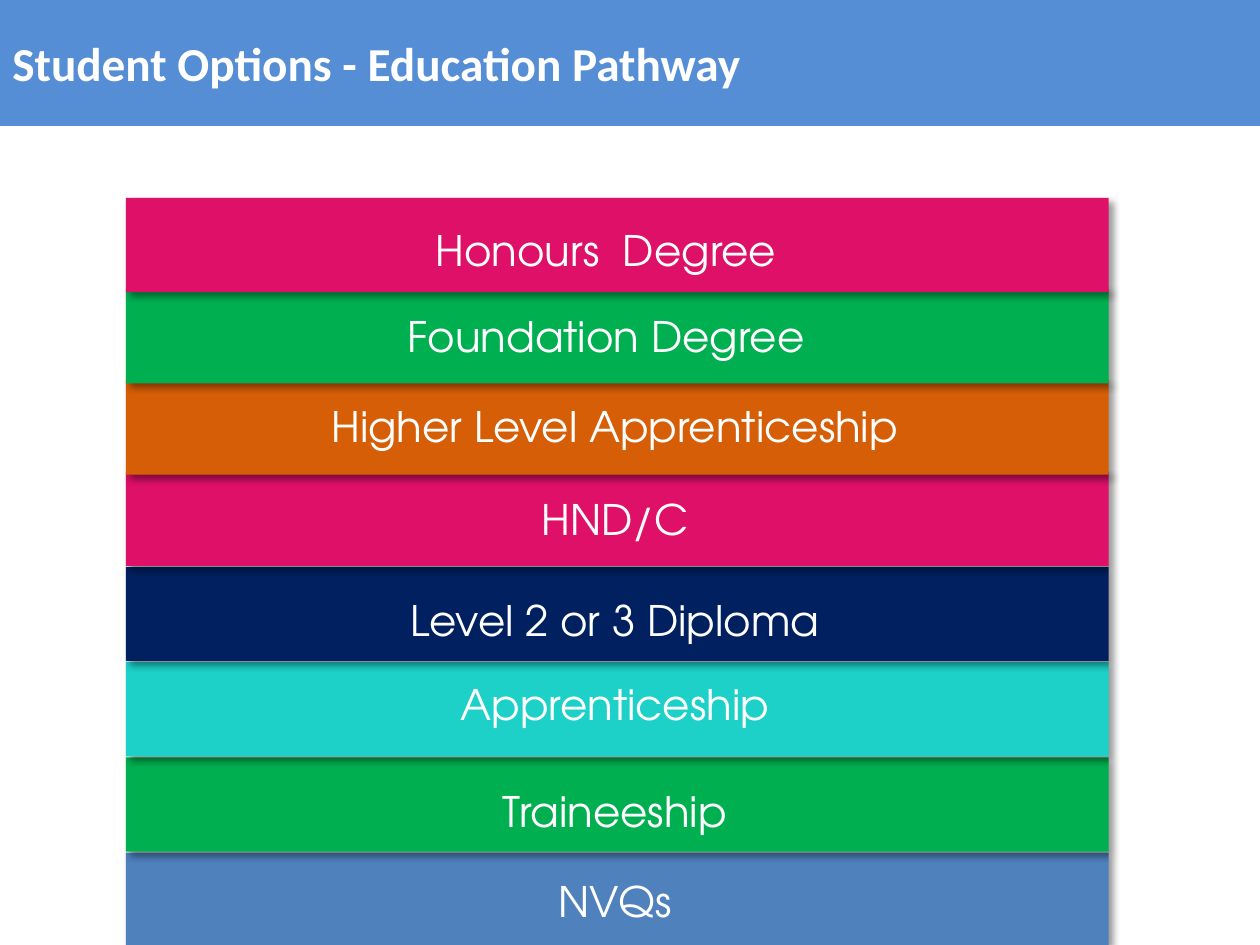
from lxml import etree
from pptx import Presentation
from pptx.dml.color import RGBColor
from pptx.enum.shapes import MSO_SHAPE
from pptx.enum.text import MSO_ANCHOR, PP_ALIGN
from pptx.oxml.ns import qn
from pptx.util import Cm, Pt

RECTANGLE = MSO_SHAPE.RECTANGLE
TOP, MIDDLE = MSO_ANCHOR.TOP, MSO_ANCHOR.MIDDLE
LEFT, CENTER = PP_ALIGN.LEFT, PP_ALIGN.CENTER

PAGE_WIDTH, PAGE_HEIGHT = 25.4, 19.05
BAR_LEFT, BAR_WIDTH, BAR_HEIGHT = 2.54, 19.81, 1.9
FIRST_BAR_TOP = 3.99
UPPER_STEP, LOWER_STEP, UPPER_STEPS = 1.84, 1.92, 3
LABEL_HEIGHT = 0.61

# Name, bar colour, label left, label offset below the bar's top edge
LEVELS = [
    ("Honours  Degree", "DE1068", 2.31, 0.74),
    ("Foundation Degree", "00B050", 2.31, 0.64),
    ("Higher Level Apprenticeship", "D65E06", 2.49, 0.61),
    ("HND/C", "DE1068", 2.49, 0.64),
    ("Level 2 or 3 Diploma", "002060", 2.49, 0.76),
    ("Apprenticeship", "1DD1C8", 2.49, 0.53),
    ("Traineeship", "00B050", 2.49, 0.76),
    ("NVQs", "4F81BD", 2.49, 0.67),
]


def color(hex_text):
    return RGBColor.from_string(hex_text)


def bar_top(index):
    """The lower bars stand slightly further apart than the upper ones."""
    upper = min(index, UPPER_STEPS)
    return FIRST_BAR_TOP + upper * UPPER_STEP + (index - upper) * LOWER_STEP


class SlideBuilder:
    """Holds the text style and the current slide."""

    text_color = "FFFFFF"
    title_font, title_size = "Calibri", 27
    label_font, label_size = "TeX Gyre Adventor", 24

    def __init__(self, page):
        self.page = page

    def rectangle(self, left, top, width, height, fill):
        shape = self.page.shapes.add_shape(
            RECTANGLE, Cm(left), Cm(top), Cm(width), Cm(height))
        shape.shadow.inherit = False
        shape.fill.solid()
        shape.fill.fore_color.rgb = color(fill)
        shape.line.fill.background()
        return shape

    def bar(self, top, fill):
        """Draw a full-width level bar with a soft shadow."""
        height = min(BAR_HEIGHT, PAGE_HEIGHT - top)
        shape = self.rectangle(BAR_LEFT, top, BAR_WIDTH, height, fill)
        effects = shape._element.spPr.find(qn("a:effectLst"))
        shadow = etree.SubElement(
            effects, qn("a:outerShdw"), blurRad=str(Pt(4)), dist=str(Pt(3)),
            dir=str(45 * 60000), algn="tl", rotWithShape="0")
        tint = etree.SubElement(shadow, qn("a:srgbClr"), val="000000")
        etree.SubElement(tint, qn("a:alpha"), val="40000")

    def text(self, words, left, top, width, height, font, size,
             align=LEFT, anchor=TOP, bold=False):
        box = self.page.shapes.add_textbox(
            Cm(left), Cm(top), Cm(width), Cm(height))
        frame = box.text_frame
        frame.word_wrap = True
        frame.vertical_anchor = anchor
        if anchor == MIDDLE:
            frame.margin_top = frame.margin_bottom = 0
        para = frame.paragraphs[0]
        para.text = words
        para.alignment = align
        para.font.name = font
        para.font.size = Pt(size)
        para.font.bold = bold
        para.font.color.rgb = color(self.text_color)

    def title(self, words):
        self.rectangle(0, 0, PAGE_WIDTH, 2.54, "558ED5")
        self.text(words, 0, 0.56, 19.89, 2.64,
                  self.title_font, self.title_size, bold=True)

    def label(self, words, left, top):
        self.text(words, left, top, BAR_WIDTH, LABEL_HEIGHT,
                  self.label_font, self.label_size, CENTER, MIDDLE)


def main():
    deck = Presentation()
    deck.slide_width, deck.slide_height = Cm(PAGE_WIDTH), Cm(PAGE_HEIGHT)
    builder = SlideBuilder(deck.slides.add_slide(deck.slide_layouts[6]))
    builder.title("Student Options - Education Pathway")
    # Bottom first, so each bar's shadow falls on the one below
    for index, level in reversed(list(enumerate(LEVELS))):
        name, fill, label_left, label_offset = level
        top = bar_top(index)
        builder.bar(top, fill)
        builder.label(name, label_left, top + label_offset)
    deck.save("out.pptx")


if __name__ == "__main__":
    main()
